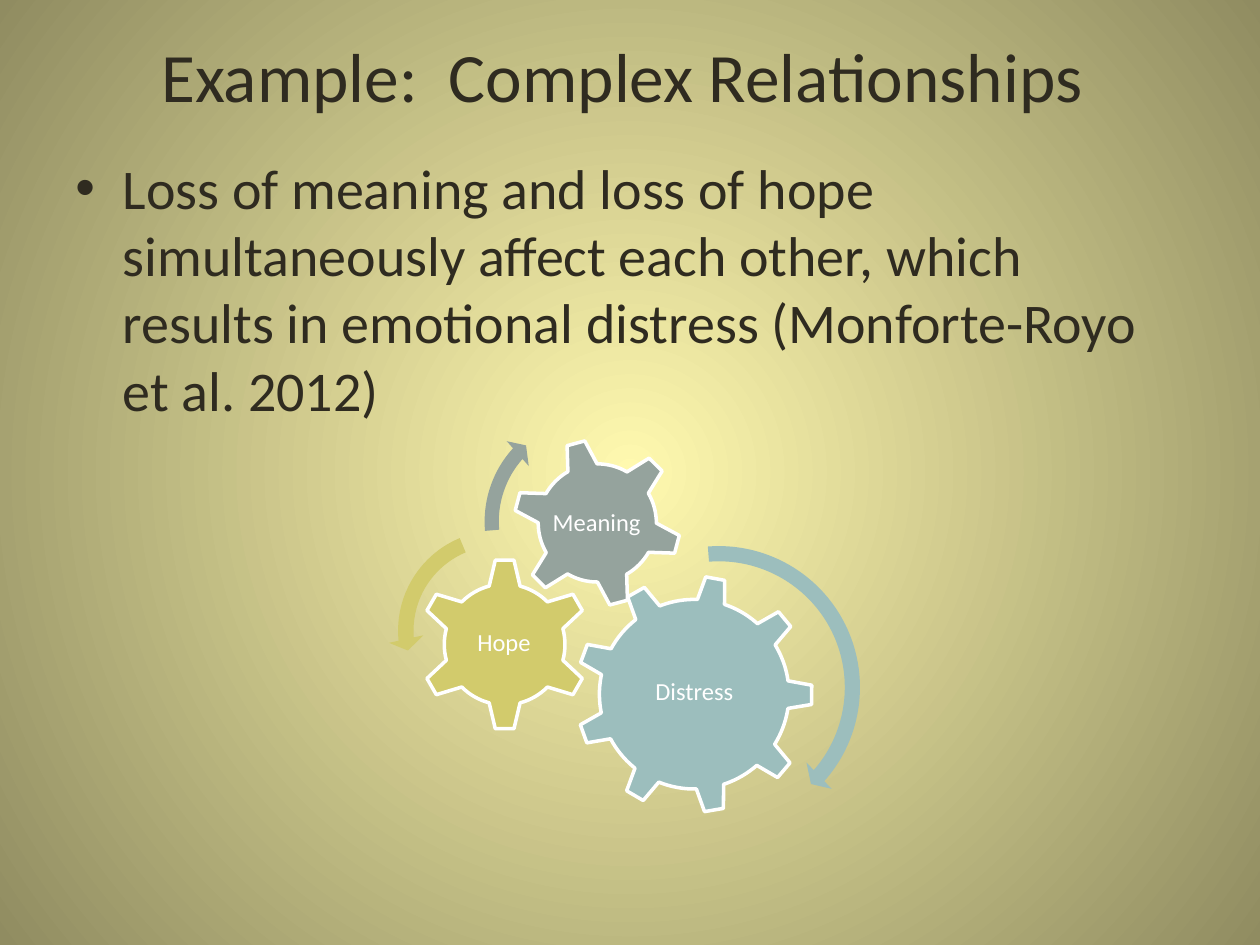
from lxml import etree
from pptx import Presentation
from pptx.dml.color import RGBColor
from pptx.enum.shapes import MSO_SHAPE as Preset
from pptx.enum.text import MSO_ANCHOR as Anchor, MSO_AUTO_SIZE as AutoSize, PP_ALIGN as Align
from pptx.oxml.ns import qn
from pptx.util import Pt

FONT = "Calibri"
INK = RGBColor(0x2F, 0x2B, 0x20)
WHITE = RGBColor(0xFF, 0xFF, 0xFF)
GLOW = RGBColor(0xFF, 0xF9, 0xAF)
EDGE = RGBColor(0x90, 0x8C, 0x61)
TEAL = RGBColor(0x9C, 0xBE, 0xBD)
OLIVE = RGBColor(0xD2, 0xCB, 0x6C)
GRAY = RGBColor(0x95, 0xA3, 0x9D)

# Gears: label, preset, colour, left, top, size, rotation, label centre (x, y)
# Places are relative to the diagram box
GEARS = [
    ("Distress", Preset.GEAR_9, TEAL, 107.2, 98.6, 135.4, 10.3, (175, 165.2)),
    ("Hope", Preset.GEAR_6, OLIVE, 17.3, 88.6, 98.6, 0, (66.2, 137.2)),
    ("Meaning", Preset.GEAR_6, GRAY, 71.3, 20.2, 96.5, 345, (119.2, 68.8)),
]
# Arrows: preset, colour, left, top, size, adjustments
ARROWS = [
    (Preset.CIRCULAR_ARROW, TEAL, 102.2, 75.6, 173.5,
     (0.05, 2.99, 24.84, 159.33, 0.06)),
    (Preset.LEFT_CIRCULAR_ARROW, OLIVE, 0, 67, 126,
     (0.07, 4.3, 104.89, 148.38, 0.08)),
    (Preset.CIRCULAR_ARROW, GRAY, 49.7, 0, 135.4,
     (0.06, 3.94, 133.14, 105.08, 0.07)),
]


def add_text(paragraph, text, size, color):
    run = paragraph.add_run()
    run.text = text
    run.font.name = FONT
    run.font.size = Pt(size)
    run.font.color.rgb = color


def paint_background(slide):
    fill = slide.background.fill
    fill.gradient()
    for stop, color, position in zip(fill.gradient_stops, (GLOW, EDGE), (0, 1)):
        stop.color.rgb = color
        stop.position = position
    # Radial gradient from the slide's centre
    linear = next(slide.element.iter(qn("a:lin")))
    gradient = linear.getparent()
    gradient.remove(linear)
    circle = etree.SubElement(gradient, qn("a:path"), path="circle")
    etree.SubElement(circle, qn("a:fillToRect"),
                     dict.fromkeys("ltrb", "50000"))


def place_title(slide, left, top, width, height):
    title = slide.shapes.title
    title.left, title.top = Pt(left), Pt(top)
    title.width, title.height = Pt(width), Pt(height)
    frame = title.text_frame
    frame.auto_size = AutoSize.NONE
    frame.vertical_anchor = Anchor.MIDDLE
    paragraph = frame.paragraphs[0]
    paragraph.alignment = Align.CENTER
    paragraph.font.size = Pt(39.6)
    add_text(paragraph, "Example:  Complex Relationships ", 39.6, INK)
    paragraph.add_line_break()


def add_body(slide, left, top, width, height):
    box = slide.shapes.add_textbox(Pt(left), Pt(top), Pt(width), Pt(height))
    box.text_frame.word_wrap = True
    paragraph = box.text_frame.paragraphs[0]
    paragraph.space_before = Pt(6.4)
    add_text(paragraph, "Loss of meaning and loss of hope simultaneously affect "
             "each other, which results in emotional distress "
             "(Monforte-Royo et al. 2012)", 32, INK)
    # Hanging bullet
    properties = paragraph._p.get_or_add_pPr()
    properties.set("marL", str(Pt(27)))
    properties.set("indent", str(-Pt(27)))
    etree.SubElement(properties, qn("a:buFont"), typeface="Arial")
    etree.SubElement(properties, qn("a:buChar"), char="•")


def add_part(slide, preset, color, left, top, size):
    shape = slide.shapes.add_shape(preset, Pt(left), Pt(top), Pt(size), Pt(size))
    shape.shadow.inherit = False
    shape.fill.solid()
    shape.fill.fore_color.rgb = color
    return shape


def add_label(slide, text, center_x, center_y, width=80, height=48):
    box = slide.shapes.add_textbox(Pt(center_x - width / 2), Pt(center_y - height / 2),
                                   Pt(width), Pt(height))
    frame = box.text_frame
    frame.word_wrap = True
    frame.vertical_anchor = Anchor.MIDDLE
    frame.margin_left = frame.margin_right = Pt(1.4)
    frame.margin_top = frame.margin_bottom = Pt(1.4)
    paragraph = frame.paragraphs[0]
    paragraph.alignment = Align.CENTER
    paragraph.line_spacing = 0.9
    add_text(paragraph, text, 14, WHITE)


def add_gear_diagram(slide, left, top):
    for text, preset, color, x, y, size, rotation, (label_x, label_y) in GEARS:
        gear = add_part(slide, preset, color, left + x, top + y, size)
        gear.rotation = rotation
        gear.line.color.rgb = WHITE
        gear.line.width = Pt(2)
        add_label(slide, text, left + label_x, top + label_y)
    for preset, color, x, y, size, adjustments in ARROWS:
        arrow = add_part(slide, preset, color, left + x, top + y, size)
        arrow.line.fill.background()
        for index, value in enumerate(adjustments):
            arrow.adjustments[index] = value


def main():
    presentation = Presentation()
    presentation.slide_width, presentation.slide_height = Pt(720), Pt(540)
    slide = presentation.slides.add_slide(presentation.slide_layouts[5])
    paint_background(slide)
    place_title(slide, 36, 21.6, 648, 90)
    add_body(slide, 36, 84.2, 648, 356.4)
    add_gear_diagram(slide, 221.8, 230.4)
    presentation.save("out.pptx")


if __name__ == "__main__":
    main()
